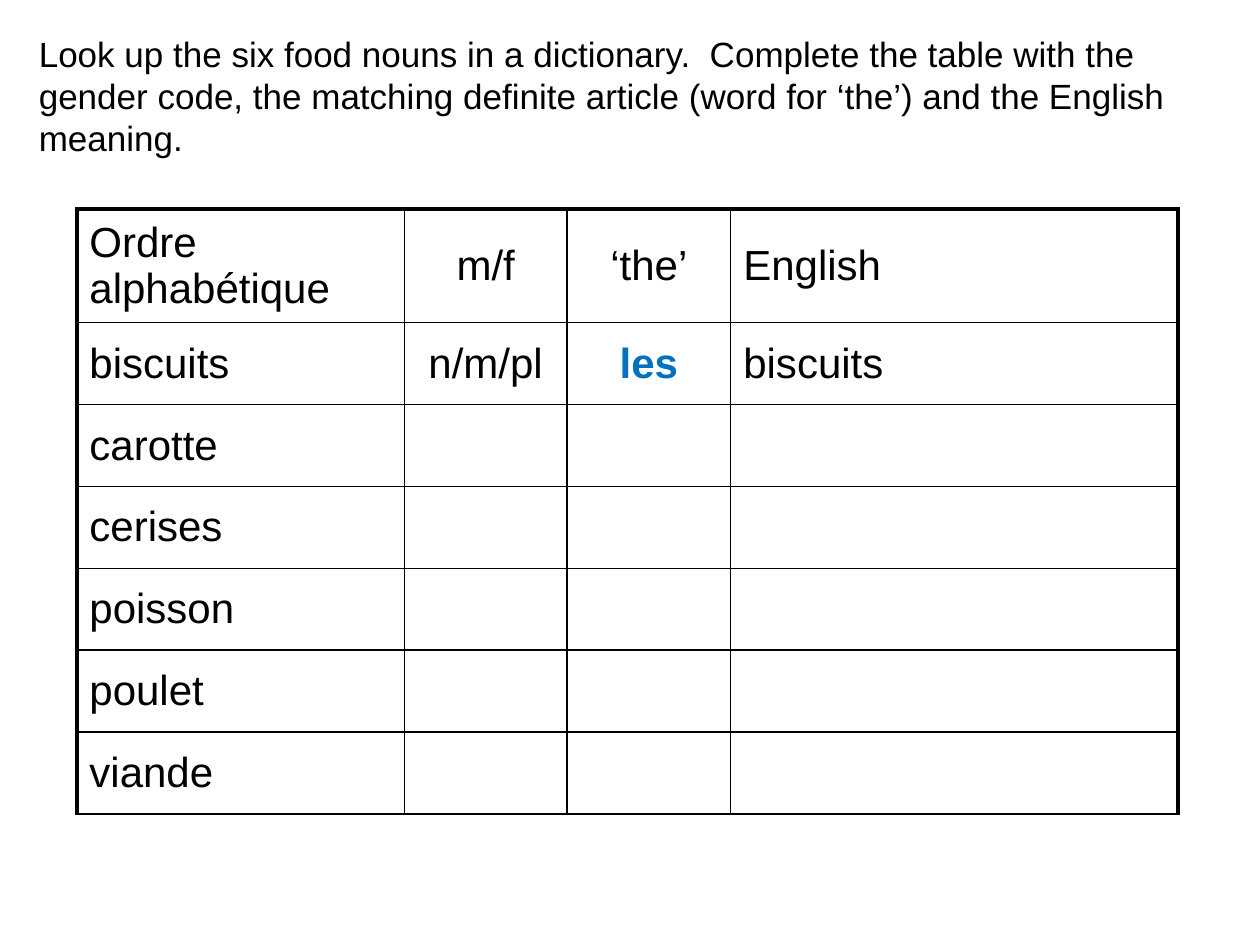
import pptx
import pptx.util
import pptx.dml.color
import pptx.enum.text
import pptx.oxml
from lxml import etree

PX = 9144  # EMU in one px, 100 px to the inch
FONT = "Arial"
COLORS = {"ink": "000000", "paper": "FFFFFF", "article": "0070C0"}
THIN, THICK = 1, 2.25

INSTRUCTION = (
    "Look up the six food nouns in a dictionary.  Complete the table with the "
    "gender code, the matching definite article (word for ‘the’) and the "
    "English meaning."
)
HEADER = ["Ordre alphabétique", "m/f", "‘the’", "English"]
EXAMPLE = ["biscuits", "n/m/pl", "les", "biscuits"]
NOUNS = ["carotte", "cerises", "poisson", "poulet", "viande"]
ROWS = [HEADER, EXAMPLE] + [[noun, "", "", ""] for noun in NOUNS]
COL_WIDTHS = [260, 129, 130, 355]
ROW_HEIGHTS = [90] + [65] * (len(ROWS) - 1)
CENTERED = (1, 2)


def emu(px):
    return pptx.util.Emu(px * PX)


def rgb(name):
    return pptx.dml.color.RGBColor.from_string(COLORS[name])


def add_run(p, text, size, color="ink", bold=False):
    r = p.add_run()
    r.text = text
    r.font.name = FONT
    r.font.size = pptx.util.Pt(size)
    r.font.bold = bold
    r.font.color.rgb = rgb(color)


def set_borders(cell, widths):
    """Draw the sides of a cell, given in the order left, right, top, bottom."""
    tc_pr = cell._tc.get_or_add_tcPr()
    for i, (side, width) in enumerate(zip("LRTB", widths)):
        ln = etree.Element(pptx.oxml.ns.qn(f"a:ln{side}"), w=str(pptx.util.Pt(width)))
        fill = etree.SubElement(ln, pptx.oxml.ns.qn("a:solidFill"))
        etree.SubElement(fill, pptx.oxml.ns.qn("a:srgbClr"), val=COLORS["ink"])
        tc_pr.insert(i, ln)


def add_instruction(s, x, y, w, h):
    tf = s.shapes.add_textbox(emu(x), emu(y), emu(w), emu(h)).text_frame
    tf.word_wrap = True
    add_run(tf.paragraphs[0], INSTRUCTION, 20)


def add_noun_table(s, x, y):
    w, h = sum(COL_WIDTHS), sum(ROW_HEIGHTS)
    table = s.shapes.add_table(
        len(ROWS), len(HEADER), emu(x), emu(y), emu(w), emu(h)
    ).table
    table.first_row = table.horz_banding = False
    for column, width in zip(table.columns, COL_WIDTHS):
        column.width = emu(width)
    for row, height in zip(table.rows, ROW_HEIGHTS):
        row.height = emu(height)

    last = len(HEADER) - 1
    for i, texts in enumerate(ROWS):
        for j, text in enumerate(texts):
            cell = table.cell(i, j)
            cell.vertical_anchor = pptx.enum.text.MSO_ANCHOR.MIDDLE
            cell.fill.solid()
            cell.fill.fore_color.rgb = rgb("paper")
            # Thick outline at the left, right and top, thin lines elsewhere
            set_borders(cell, [
                THICK if j == 0 else THIN,
                THICK if j == last else THIN,
                THICK if i == 0 else THIN,
                THIN,
            ])
            p = cell.text_frame.paragraphs[0]
            if j in CENTERED:
                p.alignment = pptx.enum.text.PP_ALIGN.CENTER
            if text:
                is_article = text == "les"
                add_run(p, text, 24, "article" if is_article else "ink", is_article)


def main():
    prs = pptx.Presentation()
    prs.slide_width, prs.slide_height = emu(1000), emu(750)
    s = prs.slides.add_slide(prs.slide_layouts[6])
    add_instruction(s, 21, 21, 953, 111)
    add_noun_table(s, 61, 166)
    prs.save("out.pptx")


if __name__ == "__main__":
    main()
